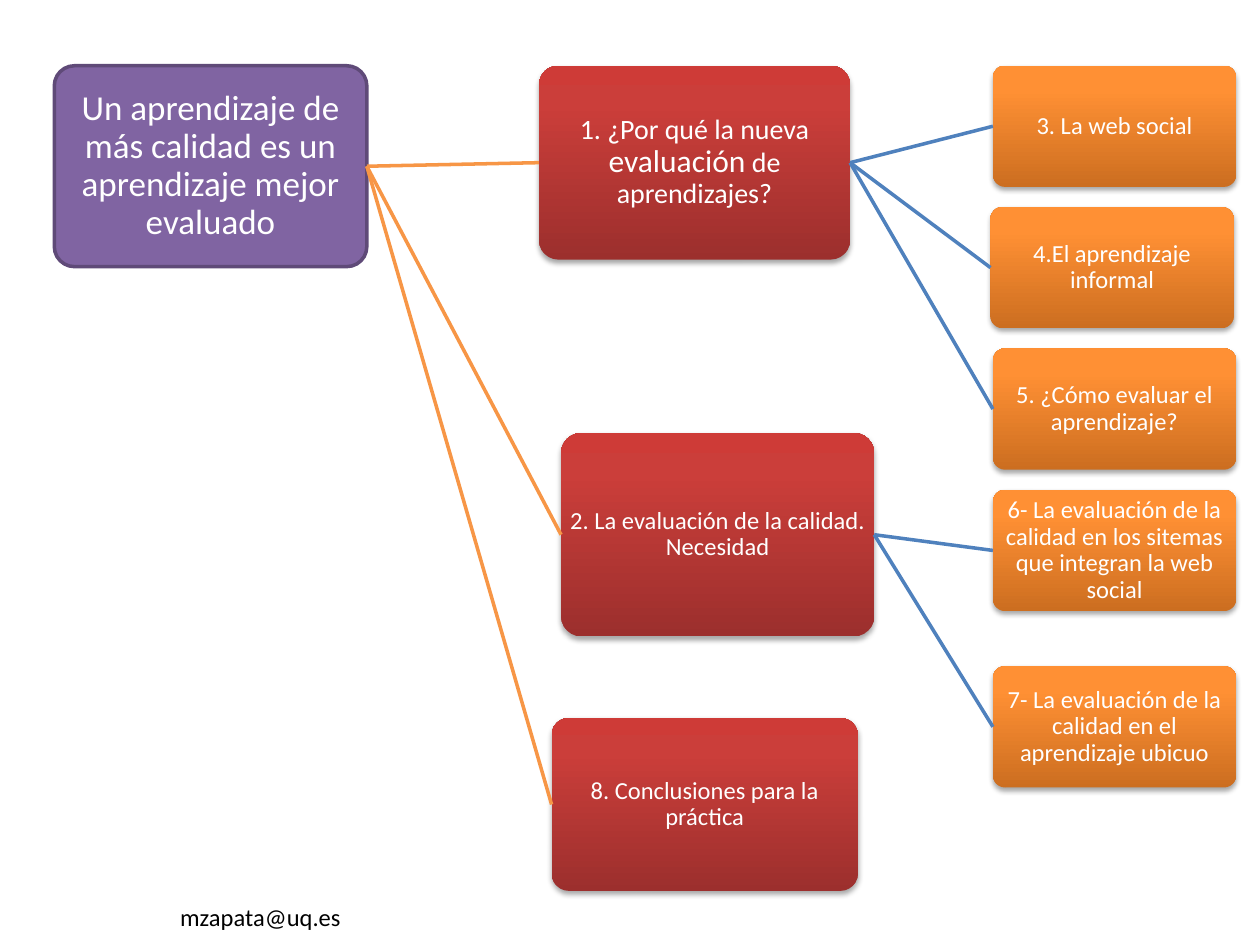
from copy import deepcopy

from lxml.etree import SubElement
from pptx import Presentation
from pptx.dml.color import RGBColor
from pptx.enum.shapes import MSO_CONNECTOR as CONNECTOR, MSO_SHAPE as SHAPE
from pptx.enum.text import MSO_ANCHOR as ANCHOR, PP_ALIGN as ALIGN
from pptx.oxml.ns import qn
from pptx.util import Pt

WHITE = RGBColor(0xFF, 0xFF, 0xFF)
BLACK = RGBColor(0, 0, 0)
PURPLE = RGBColor(0x80, 0x64, 0xA2)
DARK_PURPLE = RGBColor(0x5F, 0x4A, 0x78)
ORANGE = RGBColor(0xF7, 0x96, 0x46)
BLUE = RGBColor(0x4F, 0x81, 0xBD)
# Gradient colours from bottom to top
REDS = (RGBColor(0x9C, 0x2F, 0x2D), RGBColor(0xCB, 0x3E, 0x3A), RGBColor(0xCE, 0x3B, 0x37))
ORANGES = (RGBColor(0xCC, 0x6E, 0x20), RGBColor(0xFF, 0x90, 0x34), RGBColor(0xFF, 0x91, 0x36))
STOPS = (0, 0.8, 1)

FONT = "Calibri"
TOP = 37.5
LEAF_LEFT, LEAF_WIDTH, LEAF_HEIGHT, LEAF_PITCH = 567.4, 139, 69.3, 80.8

ROOT = ((31, 37.6, 178.6, 114.8), [("Un aprendizaje de más calidad es un aprendizaje mejor evaluado", 20)])

# Each branch: box, text runs with sizes, leaves (left, top, text)
BRANCHES = [
    ((308, TOP, 177.8, 110.9),
     [("1. ¿Por qué la nueva ", 16), ("evaluación", 18), (" de aprendizajes?", 16)],
     [(LEAF_LEFT, TOP, "3. La web social"),
      (LEAF_LEFT - 1.4, TOP + LEAF_PITCH, "4.El aprendizaje informal"),
      (LEAF_LEFT, TOP + 2 * LEAF_PITCH, "5. ¿Cómo evaluar el aprendizaje?")]),
    ((320.6, 247.4, 179, 116.3),
     [("2. La evaluación de la calidad. Necesidad", 14)],
     [(LEAF_LEFT, TOP + 3 * LEAF_PITCH,
       "6- La evaluación de la calidad en los sitemas que integran la web social"),
      (LEAF_LEFT, 380.7, "7- La evaluación de la calidad en el aprendizaje ubicuo")]),
    ((315.2, 410.3, 175, 98.8),
     [("8. Conclusiones para la práctica", 14)], []),
]


def fill_gradient(shape, colors):
    shape.fill.gradient()
    shape.fill.gradient_angle = 90
    stop_list = shape._element.spPr.find(".//" + qn("a:gsLst"))
    stop_list.append(deepcopy(stop_list[-1]))
    for stop, position, color in zip(shape.fill.gradient_stops, STOPS, colors):
        stop.position = position
        stop.color.rgb = color


def add_soft_shadow(shape):
    effects = shape._element.spPr.find(qn("a:effectLst"))
    shadow = SubElement(effects, qn("a:outerShdw"), blurRad=str(Pt(3.1)),
                        dist=str(Pt(1.8)), dir="5400000", rotWithShape="0")
    color = SubElement(shadow, qn("a:srgbClr"), val=str(BLACK))
    SubElement(color, qn("a:alpha"), val="35000")


def add_node(page, box, runs):
    """Add a rounded box with centred white text, still to be filled."""
    node = page.shapes.add_shape(SHAPE.ROUNDED_RECTANGLE, *map(Pt, box))
    node.adjustments[0] = 0.1
    node.shadow.inherit = False
    frame = node.text_frame
    frame.word_wrap = True
    frame.vertical_anchor = ANCHOR.MIDDLE
    frame.margin_left = frame.margin_right = Pt(0.7)
    frame.margin_top = frame.margin_bottom = Pt(0.7)
    para = frame.paragraphs[0]
    para.alignment = ALIGN.CENTER
    para.line_spacing = 0.9
    para.font.name = FONT
    para.font.color.rgb = WHITE
    for text, size in runs:
        span = para.add_run()
        span.text = text
        span.font.size = Pt(size)
        span.font.name = FONT
        span.font.color.rgb = WHITE
    return node


def add_root(page, box, runs):
    node = add_node(page, box, runs)
    node.fill.solid()
    node.fill.fore_color.rgb = PURPLE
    node.line.color.rgb = DARK_PURPLE
    node.line.width = Pt(2)
    return node


def add_child(page, parent, box, runs, colors, link_color):
    """Add a shaded node and the line that joins it to its parent."""
    node = add_node(page, box, runs)
    fill_gradient(node, colors)
    node.line.fill.background()
    add_soft_shadow(node)
    link = page.shapes.add_connector(CONNECTOR.STRAIGHT, 0, 0, 0, 0)
    link.begin_connect(parent, 3)
    link.end_connect(node, 1)
    link.line.color.rgb = link_color
    link.line.width = Pt(2)
    SubElement(link._element.spPr, qn("a:effectLst"))
    return node


def add_branch(page, root, box, runs, leaves):
    branch = add_child(page, root, box, runs, REDS, ORANGE)
    for left, top, text in leaves:
        leaf_box = (left, top, LEAF_WIDTH, LEAF_HEIGHT)
        add_child(page, branch, leaf_box, [(text, 14)], ORANGES, BLUE)


def add_contact(page, box):
    frame = page.shapes.add_textbox(*map(Pt, box)).text_frame
    frame.word_wrap = True
    para = frame.paragraphs[0]
    para.text = "mzapata@uq.es"
    para.font.name = FONT
    para.font.size = Pt(14)
    para.font.color.rgb = BLACK


def main():
    deck = Presentation()
    deck.slide_width, deck.slide_height = Pt(720), Pt(540)
    page = deck.slides.add_slide(deck.slide_layouts[6])
    root = add_root(page, *ROOT)
    for branch in BRANCHES:
        add_branch(page, root, *branch)
    add_contact(page, (95.8, 511.9, 118.8, 24.5))
    deck.save("out.pptx")


if __name__ == "__main__":
    main()
